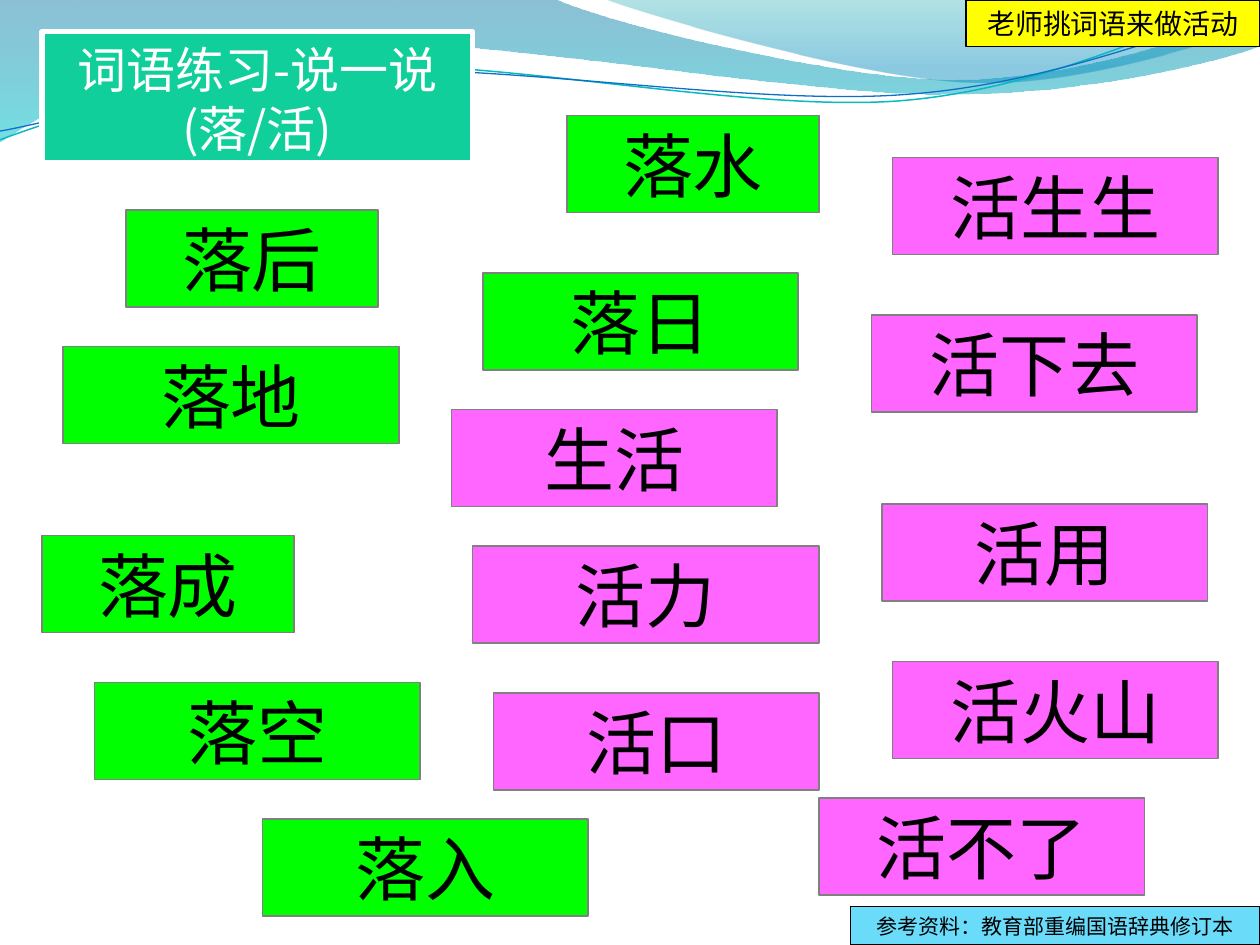
import lxml.etree
import pptx
import pptx.dml.color
import pptx.enum.shapes
import pptx.enum.text
import pptx.oxml.ns
import pptx.util

Pt = pptx.util.Pt
RGB = pptx.dml.color.RGBColor
qn = pptx.oxml.ns.qn
RECT = pptx.enum.shapes.MSO_SHAPE.RECTANGLE

FONT = "Noto Sans CJK SC"
BLACK = RGB(0x00, 0x00, 0x00)
WHITE = RGB(0xFF, 0xFF, 0xFF)
GRAY = RGB(0x80, 0x80, 0x80)
GREEN = RGB(0x00, 0xFF, 0x00)
PINK = RGB(0xFF, 0x66, 0xFF)
TEAL = RGB(0x10, 0xCF, 0x9B)
SKY = RGB(0x6B, 0xDB, 0xFA)
YELLOW = RGB(0xFF, 0xFF, 0x00)
DEEP_BLUE = RGB(0x00, 0x74, 0xA1)
CYAN = RGB(0x00, 0xC6, 0xCF)
SEA = RGB(0x00, 0xA1, 0xA9)
BLUE = RGB(0x00, 0x8B, 0xBF)
LINE_TEAL = RGB(0x0A, 0xB8, 0xBF)
LINE_BLUE = RGB(0x0F, 0x6F, 0xC6)

CARD_HEIGHT = 55.5
CARDS = [
    ("落日", GREEN, 276, 156, 180),
    ("落成", GREEN, 24, 306, 144),
    ("落后", GREEN, 72, 120, 144),
    ("落地", GREEN, 36, 198, 192),
    ("活力", PINK, 270, 312, 198),
    ("落空", GREEN, 54, 390, 186),
    ("活不了", PINK, 468, 456, 186),
    ("落入", GREEN, 150, 468, 186),
    ("落水", GREEN, 324, 66, 144),
    ("活生生", PINK, 510, 90, 186),
    ("活口", PINK, 282, 396, 186),
    ("生活", PINK, 258, 234, 186),
    ("活用", PINK, 504, 288, 186),
    ("活下去", PINK, 498, 180, 186),
    ("活火山", PINK, 510, 378, 186),
]

BAND = [
    [(0, 0)],
    [(316.8, -0.7)],
    [(342.7, 12.2), (478.1, 45.4), (545.8, 45.4)],
    [(614.2, 45.4), (689.8, 18.7), (720, 6.5)],
    [(720.7, 25.9)],
    [(707.8, 31.7), (626.4, 54.7), (537.1, 54)],
    [(447.8, 54), (275, 20.2), (185, 24.5)],
    [(92.9, 25.9), (33.1, 59.8), (-0.7, 81.4)],
]
CREST = [
    [(344.9, -0.7)],
    [(366.5, 7.9), (491, 44.6), (553.7, 46.8)],
    [(616.3, 49.7), (691.9, 23), (720, 15.1)],
    [(720, 0)],
]
TEAL_CURVE = [
    [(-1.4, 62.9)],
    [(33.7, 51.7), (114.1, 29.4), (199.8, 29.9)],
    [(284.8, 30.3), (425.8, 67.3), (512.4, 64.9)],
    [(599, 62.4), (676.4, 25.7), (720.2, 15.6)],
]
BLUE_CURVE = [
    [(-1.1, 57.9)],
    [(32.9, 53.7), (118.3, 32.5), (204.1, 33)],
    [(290.6, 33.4), (428.9, 63.8), (515.5, 61.4)],
    [(601.3, 59.6), (678.5, 30.1), (721.4, 21.3)],
]


def write_text(sp, text, size=40, color=BLACK, spacing=None):
    """Write one centred line of formatted text in a shape."""
    tf = sp.text_frame
    tf.word_wrap = True
    tf.auto_size = pptx.enum.text.MSO_AUTO_SIZE.NONE
    tf.vertical_anchor = pptx.enum.text.MSO_ANCHOR.MIDDLE
    p = tf.paragraphs[0]
    p.alignment = pptx.enum.text.PP_ALIGN.CENTER
    if spacing:
        p.line_spacing = Pt(spacing)
    r = p.add_run()
    r.text = text
    r.font.size = Pt(size)
    r.font.name = FONT
    r.font.color.rgb = color
    lxml.etree.SubElement(r.font._element, qn("a:ea"), typeface=FONT)


def paint(sp, fill, line, width=0.75):
    """Give a shape a solid fill and outline without a shadow."""
    sp.fill.solid()
    sp.fill.fore_color.rgb = fill
    sp.line.color.rgb = line
    sp.line.width = Pt(width)
    sp.shadow.inherit = False


def add_label(s, box, text, fill, line=BLACK, size=40):
    """Add a filled rectangle with text in the given box."""
    sp = s.shapes.add_shape(RECT, *map(Pt, box))
    paint(sp, fill, line)
    write_text(sp, text, size=size)


def add_curve(s, left, top, segments, closed):
    """Add a freeform of lines and cubic curves, offset by left and top."""
    segments = [[(Pt(left + x), Pt(top + y)) for x, y in part] for part in segments]
    builder = s.shapes.build_freeform(*segments[0][0])
    builder.add_line_segments([part[-1] for part in segments[1:]], close=closed)
    sp = builder.convert_to_shape()
    sp.shadow.inherit = False
    steps = list(sp.element.iter(qn("a:lnTo")))
    for step, part in zip(steps, segments[1:]):
        if len(part) == 3:
            curve = lxml.etree.Element(qn("a:cubicBezTo"))
            for x, y in part:
                lxml.etree.SubElement(curve, qn("a:pt"), x=str(x - sp.left), y=str(y - sp.top))
            step.getparent().replace(step, curve)
    return sp


def add_wave(s, left, top, segments, stops):
    """Add a wave with a translucent top-to-bottom gradient."""
    sp = add_curve(s, left, top, segments, True)
    sp.line.fill.background()
    sp.fill.gradient()
    sp.fill.gradient_angle = 270
    marks = sp.element.iter(qn("a:gs"))
    for stop, mark, (position, color, opacity) in zip(sp.fill.gradient_stops, marks, stops):
        stop.position = position
        stop.color.rgb = color
        lxml.etree.SubElement(mark[0], qn("a:alpha"), val=str(opacity * 1000))


def add_header(s, left, top):
    """Draw the waves and the two thin curves across the top."""
    add_wave(s, left, top, BAND, [(0, DEEP_BLUE, 45), (1, CYAN, 55)])
    add_wave(s, left, top, CREST, [(0, SEA, 30), (0.8, BLUE, 45)])
    for segments, color, width in ((TEAL_CURVE, LINE_TEAL, 0.85), (BLUE_CURVE, LINE_BLUE, 0.75)):
        sp = add_curve(s, left, top, segments, False)
        sp.rotation = 357.3
        sp.fill.background()
        sp.line.color.rgb = color
        sp.line.width = Pt(width)


def place_title(s, box, text):
    """Format the title placeholder as a framed box above the waves."""
    sp = s.shapes.title
    sp.left, sp.top, sp.width, sp.height = map(Pt, box)
    paint(sp, TEAL, WHITE, width=3)
    write_text(sp, text, size=28, color=WHITE, spacing=34)
    sp.text_frame.margin_top = Pt(4.5)
    sp.element.getparent().append(sp.element)


def add_cards(s, left, top):
    """Scatter the word cards from the given corner."""
    for text, fill, x, y, width in CARDS:
        add_label(s, (left + x, top + y, width, CARD_HEIGHT), text, fill, line=GRAY)


def main():
    """Build the slide and save it."""
    prs = pptx.Presentation()
    prs.slide_width, prs.slide_height = Pt(720), Pt(540)
    s = prs.slides.add_slide(prs.slide_layouts[5])
    add_header(s, 0, 0)
    place_title(s, (24, 18, 246, 75), "词语练习-说一说(落/活)")
    add_cards(s, 0, 0)
    add_label(s, (486, 518, 234, 22), "参考资料：教育部重编国语辞典修订本", SKY, size=12)
    add_label(s, (552, 0, 168, 26.5), "老师挑词语来做活动", YELLOW, size=16)
    prs.save("out.pptx")


if __name__ == "__main__":
    main()
